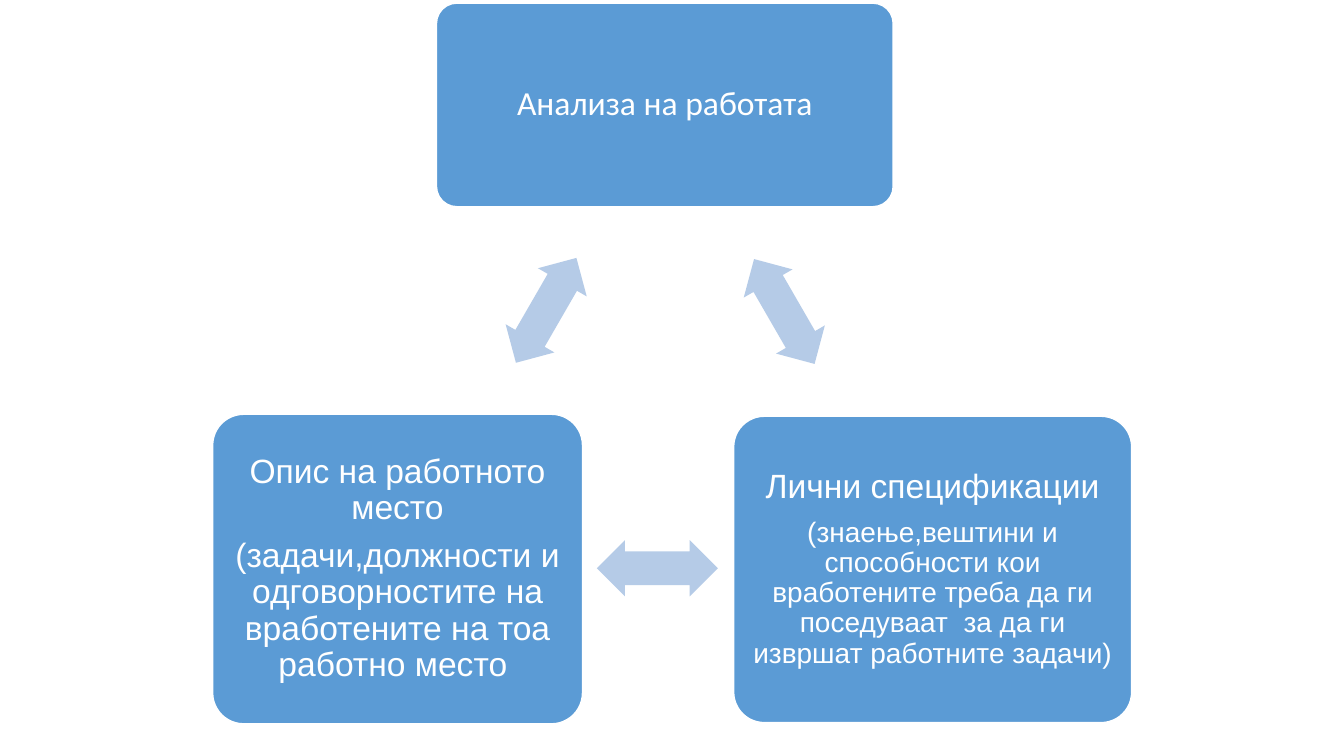
from typing import NamedTuple

from pptx import Presentation
from pptx.dml.color import RGBColor
from pptx.enum.shapes import MSO_SHAPE
from pptx.enum.text import MSO_ANCHOR, PP_ALIGN
from pptx.util import Cm, Pt

ROUNDED = MSO_SHAPE.ROUNDED_RECTANGLE
DOUBLE_ARROW = MSO_SHAPE.LEFT_RIGHT_ARROW
MIDDLE = MSO_ANCHOR.MIDDLE
CENTER = PP_ALIGN.CENTER

COLORS = {"box": "5B9BD5", "arrow": "B5CBE7", "white": "FFFFFF"}
ARROW_WIDTH, ARROW_HEIGHT = 3.05, 1.42
SPACE_AFTER_RATIO = 0.35


class Line(NamedTuple):
    text: str
    size: int = 24


class Topic(NamedTuple):
    left: float
    top: float
    width: float
    height: float
    font: str
    lines: list[Line]


class Link(NamedTuple):
    left: float
    top: float
    rotation: int


TOPICS = [
    Topic(11, 0.08, 11.51, 5.13, "Calibri", [Line("Анализа на работата")]),
    Topic(18.49, 10.49, 10.03, 7.72, "Arial", [
        Line("Лични спецификации"),
        Line("(знаење,вештини и способности кои вработените треба да ги "
             "поседуваат  за да ги извршат работните задачи)", 20),
    ]),
    Topic(5.36, 10.44, 9.32, 7.8, "Arial", [
        Line("Опис на работното место"),
        Line("(задачи,должности и одговорностите на вработените на тоа "
             "работно место "),
    ]),
]

LINKS = [Link(18.24, 7.14, 60), Link(15.04, 13.61, 180), Link(12.24, 7.11, 300)]


def color(name: str) -> RGBColor:
    return RGBColor.from_string(COLORS[name])


def draw_topic(shapes, topic: Topic) -> None:
    box = shapes.add_shape(ROUNDED, Cm(topic.left), Cm(topic.top),
                           Cm(topic.width), Cm(topic.height))
    box.adjustments[0] = 0.1
    box.shadow.inherit = False
    box.fill.solid()
    box.fill.fore_color.rgb = color("box")
    box.line.color.rgb = color("white")
    box.line.width = Pt(1)

    frame = box.text_frame
    frame.word_wrap = True
    frame.vertical_anchor = MIDDLE
    frame.margin_left = frame.margin_right = Cm(0.25)
    frame.margin_top = frame.margin_bottom = Cm(0.25)
    for index, line in enumerate(topic.lines):
        paragraph = frame.add_paragraph() if index else frame.paragraphs[0]
        paragraph.alignment = CENTER
        paragraph.line_spacing = 0.9
        paragraph.space_after = Pt(line.size * SPACE_AFTER_RATIO)
        run = paragraph.add_run()
        run.text = line.text
        run.font.name = topic.font
        run.font.size = Pt(line.size)
        run.font.color.rgb = color("white")


def draw_link(shapes, link: Link) -> None:
    arrow = shapes.add_shape(DOUBLE_ARROW, Cm(link.left), Cm(link.top),
                             Cm(ARROW_WIDTH), Cm(ARROW_HEIGHT))
    arrow.adjustments[0] = 0.6
    arrow.adjustments[1] = 0.5
    arrow.rotation = link.rotation
    arrow.shadow.inherit = False
    arrow.fill.solid()
    arrow.fill.fore_color.rgb = color("arrow")
    arrow.line.fill.background()


def main() -> None:
    deck = Presentation()
    deck.slide_width, deck.slide_height = Cm(33.87), Cm(19.05)
    slide = deck.slides.add_slide(deck.slide_layouts[6])

    # Each topic is followed by the arrow to the next one in the cycle
    for topic, link in zip(TOPICS, LINKS):
        draw_topic(slide.shapes, topic)
        draw_link(slide.shapes, link)

    deck.save("out.pptx")


if __name__ == "__main__":
    main()
